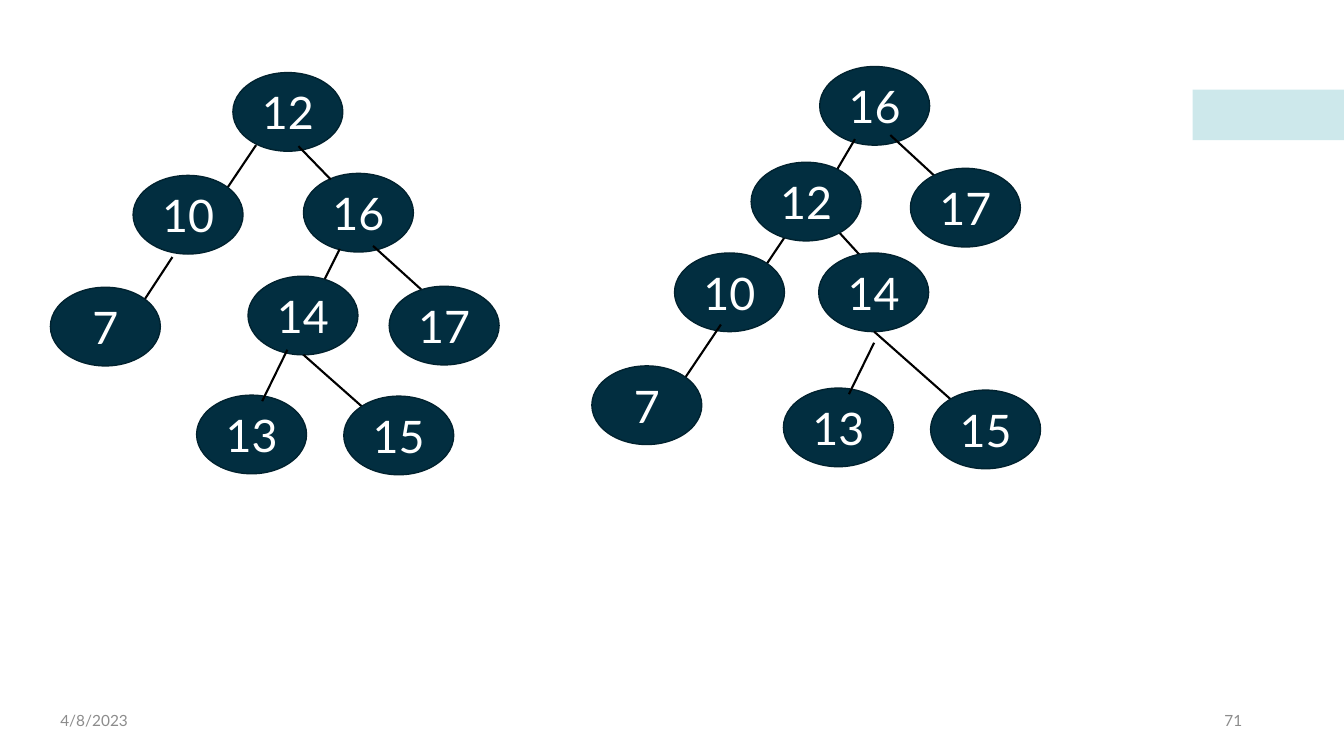
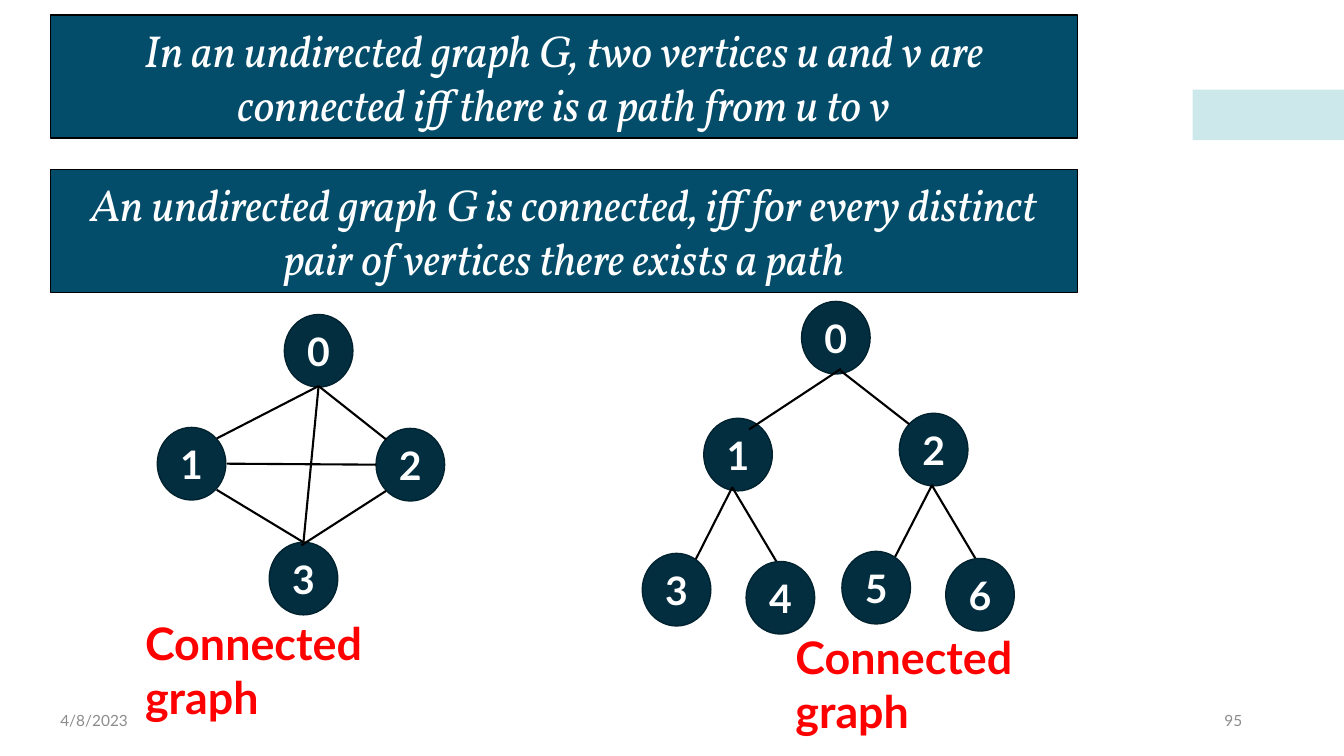
from lxml import etree
from pptx import Presentation
from pptx.dml.color import RGBColor
from pptx.enum import shapes, text
from pptx.oxml import ns
from pptx.util import Inches, Pt

SLIDE_WIDTH, SLIDE_HEIGHT = 13.33, 7.5
WHITE, BLACK, RED, GREY = "FFFFFF", "000000", "FF0000", "8C8C8C"
NODE_FILL, NODE_LINE, BANNER_FILL, ACCENT = "022E40", "01222F", "034D6B", "9CD3D9"
BODY_FONT, STATEMENT_FONT = "Lato", "Vollkorn"
LEFT_MARGIN = 0.5
DATE = "4/8/2023"
LEFT, CENTER, RIGHT = text.PP_ALIGN.LEFT, text.PP_ALIGN.CENTER, text.PP_ALIGN.RIGHT
TOP, MIDDLE = text.MSO_ANCHOR.TOP, text.MSO_ANCHOR.MIDDLE

TREE_NODE = {"size": (1.09, 0.78), "font_size": 32, "bold": False}
GRAPH_NODE = {"size": (0.68, 0.72), "font_size": 28, "bold": True}

# fmt: off
ROOT_12_TREE = [
    ("12", 1.81, 0), ("16", 2.51, 1),
    (2.46, 0.73, 2.78, 1.06), (2.87, 1.75, 2.62, 2.25),
    ("13", 1.45, 3.2), (3.2, 1.72, 3.72, 2.19),
    ("14", 1.96, 2.02), ("17", 3.36, 2.12), (2.04, 0.72, 1.65, 1.3),
    ("10", 0.82, 1.02), (2.51, 2.8, 3.29, 3.49),
    ("15", 2.91, 3.21), (1.21, 1.83, 0.83, 2.41),
    ("7", 0, 2.13), (2.35, 2.75, 2.1, 3.26),
]
ROOT_16_TREE = [
    ("16", 2.26, 0), (2.42, 1.61, 2.73, 1.95), (2.61, 0.72, 2.41, 1.06),
    ("13", 1.9, 3.19), (2.96, 0.68, 3.48, 1.16),
    ("14", 2.25, 1.85), ("17", 3.16, 1.01), (2.09, 1.43, 1.7, 2.01),
    ("10", 0.82, 1.85), (2.8, 2.63, 3.58, 3.32),
    ("15", 3.36, 3.21), (1.28, 2.56, 0.89, 3.14),
    ("7", 0, 2.97), (2.8, 2.74, 2.55, 3.25), ("12", 1.58, 0.95),
]
COMPLETE_GRAPH = [
    ("0", 1.26, 0), ("1", 0, 1.12), ("2", 2.17, 1.13), ("3", 1.11, 2.26),
    (1.6, 0.71, 0.59, 1.23), (1.6, 0.71, 2.27, 1.24),
    (1.45, 2.26, 0.59, 1.74), (2.27, 1.75, 1.43, 2.29),
    (1.6, 0.71, 1.45, 2.26), (2.17, 1.49, 0.69, 1.48),
]
TREE_GRAPH = [
    ("0", 1.58, 0), ("1", 0.61, 1.16), ("2", 2.55, 1.11),
    (1.97, 0.67, 1.06, 1.27), (1.97, 0.69, 2.65, 1.22),
    (0.89, 1.85, 0.52, 2.58), (0.89, 1.84, 1.33, 2.58),
    ("3", 0, 2.5), ("4", 1.03, 2.58),
    (2.87, 1.83, 2.5, 2.55), (2.87, 1.82, 3.31, 2.56),
    ("5", 1.98, 2.48), ("6", 3.01, 2.55),
]
# fmt: on
STATEMENTS = [
    "In an undirected graph G, two vertices u and v are connected iff there is a path from u to v",
    "An undirected graph G is connected, iff for every distinct pair of vertices there exists a path",
]


def paint(color_format, color):
    color_format.rgb = RGBColor.from_string(color)


def write(shape, content, size=32, font=BODY_FONT, color=WHITE, bold=False,
          italic=False, align=CENTER, anchor=MIDDLE, wrap=True):
    frame = shape.text_frame
    frame.word_wrap = wrap
    frame.vertical_anchor = anchor
    paragraph = frame.paragraphs[0]
    paragraph.alignment = align
    run = paragraph.add_run()
    run.text = content
    run.font.size = Pt(size)
    run.font.name = font
    run.font.bold = bold
    run.font.italic = italic
    paint(run.font.color, color)


def add_label(slide, box, content, **style):
    write(slide.shapes.add_textbox(*map(Inches, box)), content, **style)


def add_filled(slide, kind, box, fill, line=None):
    shape = slide.shapes.add_shape(kind, *map(Inches, box))
    shape.shadow.inherit = False
    shape.fill.solid()
    paint(shape.fill.fore_color, fill)
    if line:
        paint(shape.line.color, line)
        shape.line.width = Pt(1)
    else:
        shape.line.fill.background()
    return shape


def add_edge(slide, start, end):
    edge = slide.shapes.add_connector(
        shapes.MSO_CONNECTOR.STRAIGHT, *map(Inches, (*start, *end)))
    paint(edge.line.color, BLACK)
    edge.line.width = Pt(1.5)
    etree.SubElement(edge.element.spPr, ns.qn("a:effectLst"))


def add_node(slide, left, top, label, size, font_size, bold):
    node = add_filled(slide, shapes.MSO_SHAPE.OVAL, (left, top, *size), NODE_FILL, NODE_LINE)
    write(node, label, size=font_size, bold=bold, wrap=False)


def add_graph(slide, left, top, parts, node_style):
    for part in parts:
        if isinstance(part[0], str):
            label, x, y = part
            add_node(slide, left + x, top + y, label, **node_style)
        else:
            x1, y1, x2, y2 = part
            add_edge(slide, (left + x1, top + y1), (left + x2, top + y2))


def add_caption(slide, left, top):
    add_label(slide, (left, top, 3.35, 0.64), "Connected graph",
              color=RED, bold=True, align=LEFT, anchor=TOP)


def add_statements(slide, left, top, width, height, pitch):
    for row, statement in enumerate(STATEMENTS):
        box = (left, top + row * pitch, width, height)
        banner = add_filled(slide, shapes.MSO_SHAPE.RECTANGLE, box, BANNER_FILL, BLACK)
        write(banner, statement, font=STATEMENT_FONT, italic=True)


def add_base_slide(deck, number):
    slide = deck.slides.add_slide(deck.slide_layouts.get_by_name("Blank"))
    accent = add_filled(slide, shapes.MSO_SHAPE.RECTANGLE, (11.83, 0.89, 1.5, 0.5), ACCENT)
    color = accent.fill._xPr.find(".//" + ns.qn("a:srgbClr"))
    etree.SubElement(color, ns.qn("a:alpha"), val="50000")
    for left, content, align in ((LEFT_MARGIN, DATE, LEFT), (9.42, number, RIGHT)):
        add_label(slide, (left, 6.95, 3, 0.4), content, size=11, color=GREY, align=align)
    return slide


def build_rotation_slide(deck):
    slide = add_base_slide(deck, "71")
    add_graph(slide, LEFT_MARGIN, 0.72, ROOT_12_TREE, TREE_NODE)
    add_graph(slide, 5.87, 0.66, ROOT_16_TREE, TREE_NODE)


def build_connected_slide(deck):
    slide = add_base_slide(deck, "95")
    add_statements(slide, LEFT_MARGIN, 0.15, 10.19, 1.22, pitch=1.53)
    add_graph(slide, 1.56, 3.12, COMPLETE_GRAPH, GRAPH_NODE)
    add_graph(slide, 6.37, 2.99, TREE_GRAPH, GRAPH_NODE)
    add_caption(slide, 1.34, 6.06)
    add_caption(slide, 7.79, 6.2)


def main():
    deck = Presentation()
    deck.slide_width, deck.slide_height = Inches(SLIDE_WIDTH), Inches(SLIDE_HEIGHT)
    build_rotation_slide(deck)
    build_connected_slide(deck)
    deck.save("out.pptx")


if __name__ == "__main__":
    main()
